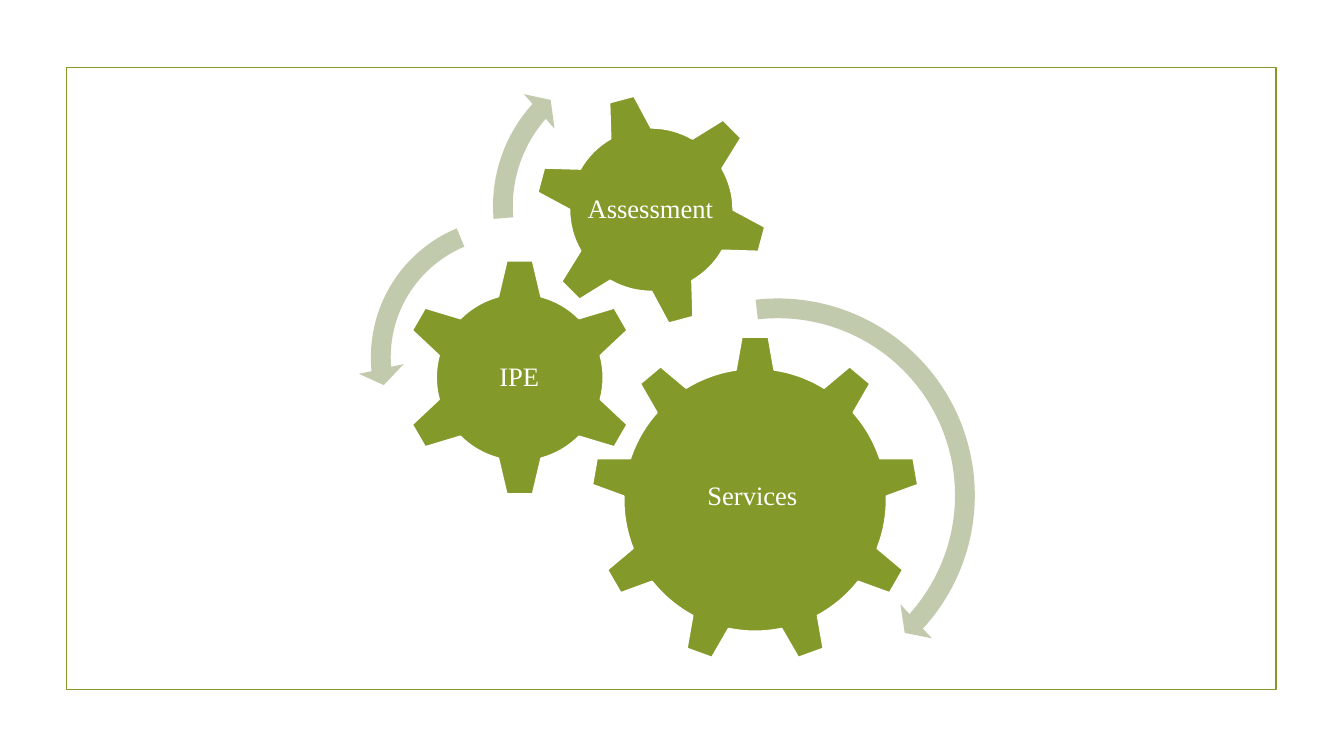
"""Build a slide of three interlocking gears with circular arrows around them."""
from dataclasses import dataclass

from pptx import Presentation
from pptx import util as u
from pptx.dml.color import RGBColor
from pptx.enum import shapes, text

SCALE = 9144
FONT = "Times New Roman"
COLORS = {"green": "83992A", "pale": "C1CAAD", "white": "FFFFFF"}
KIND = shapes.MSO_SHAPE


@dataclass
class Box:
    left: int
    top: int
    width: int
    height: int

    def emu(self) -> list[u.Emu]:
        return [u.Emu(n * SCALE) for n in (self.left, self.top, self.width, self.height)]


@dataclass
class Gear:
    kind: KIND
    box: Box
    label: str
    room: Box
    turn: int = 0


@dataclass
class Arrow:
    kind: KIND
    box: Box
    mills: tuple[int, ...]


FRAME = Box(66, 67, 1200, 617)
GEARS = [
    Gear(KIND.GEAR_9, Box(586, 333, 326, 326), "Services ", Box(652, 409, 195, 168)),
    Gear(KIND.GEAR_6, Box(397, 256, 237, 237), "IPE", Box(456, 316, 118, 117)),
    Gear(KIND.GEAR_6, Box(530, 92, 232, 232), "Assessment", Box(578, 143, 134, 130), 345),
]
ARROWS = [
    Arrow(KIND.CIRCULAR_ARROW, Box(563, 283, 417, 417), (47, 2990, 25393, 158123, 55)),
    Arrow(KIND.LEFT_CIRCULAR_ARROW, Box(355, 203, 303, 303), (65, 4300, 104891, 148378, 75)),
    Arrow(KIND.CIRCULAR_ARROW, Box(476, 41, 327, 327), (60, 3941, 133138, 105082, 70)),
]


def color(name: str) -> RGBColor:
    return RGBColor.from_string(COLORS[name])


def draw_shape(slide, kind: KIND, box: Box, fill: str = "", line: str = ""):
    shape = slide.shapes.add_shape(kind, *box.emu())
    shape.shadow.inherit = False
    if fill:
        shape.fill.solid()
        shape.fill.fore_color.rgb = color(fill)
    else:
        shape.fill.background()
    if line:
        shape.line.color.rgb = color(line)
        shape.line.width = u.Pt(1.25)
    else:
        shape.line.fill.background()
    return shape


def draw_label(slide, words: str, room: Box) -> None:
    frame = slide.shapes.add_textbox(*room.emu()).text_frame
    frame.word_wrap = True
    frame.vertical_anchor = text.MSO_ANCHOR.MIDDLE
    frame.margin_left = frame.margin_right = u.Emu(3 * SCALE)
    frame.margin_top = frame.margin_bottom = u.Emu(3 * SCALE)
    frame.text = words
    para = frame.paragraphs[0]
    para.alignment = text.PP_ALIGN.CENTER
    para.line_spacing = 0.9
    font = para.runs[0].font
    font.name = FONT
    font.size = u.Pt(19)
    font.color.rgb = color("white")


def draw_gear(slide, gear: Gear) -> None:
    shape = draw_shape(slide, gear.kind, gear.box, "green", "white")
    shape.rotation = gear.turn
    draw_label(slide, gear.label, gear.room)


def draw_arrow(slide, arrow: Arrow) -> None:
    shape = draw_shape(slide, arrow.kind, arrow.box, "pale")
    for index, value in enumerate(arrow.mills):
        shape.adjustments[index] = value / 1000


def main() -> None:
    deck = Presentation()
    deck.slide_width = u.Emu(1333 * SCALE)
    deck.slide_height = u.Emu(750 * SCALE)
    slide = deck.slides.add_slide(deck.slide_layouts[6])
    draw_shape(slide, KIND.RECTANGLE, FRAME, line="green")
    for gear in GEARS:
        draw_gear(slide, gear)
    for arrow in ARROWS:
        draw_arrow(slide, arrow)
    deck.save("out.pptx")


if __name__ == "__main__":
    main()
